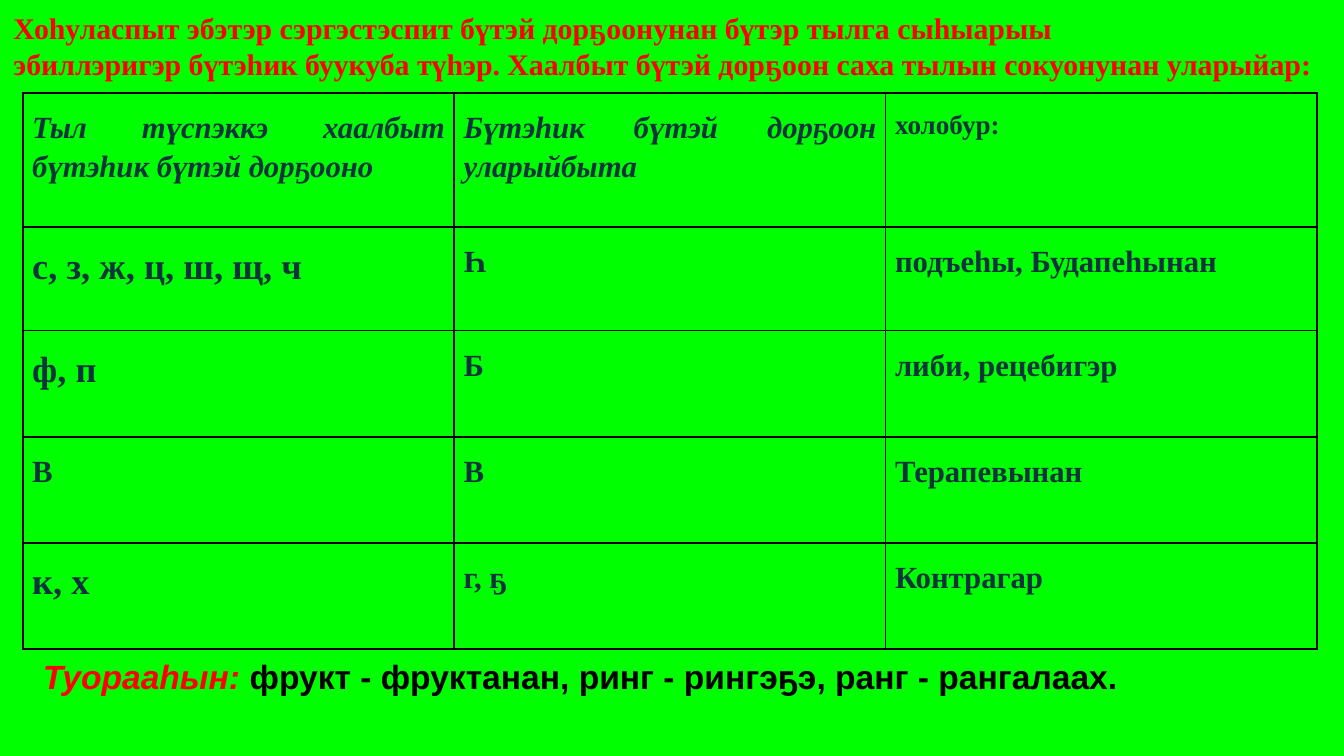
from dataclasses import dataclass

from lxml.etree import SubElement
from pptx import Presentation
from pptx.dml.color import RGBColor
from pptx.enum.text import MSO_ANCHOR, MSO_AUTO_SIZE, PP_ALIGN
from pptx.oxml.ns import qn
from pptx.util import Inches, Pt


@dataclass(frozen=True)
class Theme:
    background: str = "00FF00"
    accent: str = "FF0000"
    ink: str = "000000"
    table_ink: str = "0C343D"
    serif: str = "Times New Roman"
    sans: str = "Arial"
    title_size: float = 16
    note_size: float = 18
    cell_size: float = 16.5
    letters_size: float = 19.5
    example_size: float = 14.5
    border: float = 1


class SlideBuilder:
    def __init__(self, presentation, theme):
        self.theme = theme
        self.slide = presentation.slides.add_slide(presentation.slide_layouts[5])
        fill = self.slide.background.fill
        fill.solid()
        fill.fore_color.rgb = RGBColor.from_string(theme.background)

    def run(self, paragraph, text, font, size, color, italic=False):
        run = paragraph.add_run()
        run.text = text
        run.font.name = font
        run.font.size = Pt(size)
        run.font.bold = True
        run.font.italic = italic
        run.font.color.rgb = RGBColor.from_string(color)

    def title(self, lines, left, top, width, height):
        shape = self.slide.shapes.title
        shape.left, shape.top = Inches(left), Inches(top)
        shape.width, shape.height = Inches(width), Inches(height)
        frame = shape.text_frame
        frame.word_wrap = True
        frame.auto_size = MSO_AUTO_SIZE.NONE
        frame.vertical_anchor = MSO_ANCHOR.TOP
        frame.margin_top = Inches(0.07)
        for index, line in enumerate(lines):
            paragraph = frame.add_paragraph() if index else frame.paragraphs[0]
            paragraph.alignment = PP_ALIGN.LEFT
            self.run(paragraph, line, self.theme.serif, self.theme.title_size, self.theme.accent)

    def note(self, label, text, left, top, width, height):
        shape = self.slide.shapes.add_textbox(
            Inches(left), Inches(top), Inches(width), Inches(height))
        frame = shape.text_frame
        frame.word_wrap = True
        frame.margin_top = frame.margin_bottom = Inches(0.1)
        paragraph = frame.paragraphs[0]
        theme = self.theme
        self.run(paragraph, label, theme.sans, theme.note_size, theme.accent, italic=True)
        self.run(paragraph, text, theme.sans, theme.note_size, theme.ink)

    def borders(self, cell):
        properties = cell._tc.get_or_add_tcPr()
        for side in ("lnL", "lnR", "lnT", "lnB"):
            line = SubElement(properties, qn(f"a:{side}"), w=str(Pt(self.theme.border)))
            fill = SubElement(line, qn("a:solidFill"))
            SubElement(fill, qn("a:srgbClr"), val=self.theme.ink)

    def cell(self, cell, text, size, italic=False, alignment=PP_ALIGN.JUSTIFY, after=12):
        cell.margin_left = cell.margin_right = Inches(0.07)
        cell.margin_top = cell.margin_bottom = Inches(0.1)
        self.borders(cell)
        cell.fill.background()
        paragraph = cell.text_frame.paragraphs[0]
        paragraph.alignment = alignment
        paragraph.line_spacing = 1.15
        paragraph.space_before = Pt(12)
        paragraph.space_after = Pt(after)
        self.run(paragraph, text, self.theme.serif, size, self.theme.table_ink, italic)

    def table(self, rows, left, top, column_width, row_heights):
        columns = len(rows[0])
        table = self.slide.shapes.add_table(
            len(rows), columns, Inches(left), Inches(top),
            Inches(column_width * columns), Inches(sum(row_heights))).table
        table.first_row = table.horz_banding = False
        for column in table.columns:
            column.width = Inches(column_width)
        for row, height in zip(table.rows, row_heights):
            row.height = Inches(height)
        for row_index, row in enumerate(rows):
            for column_index, (text, style) in enumerate(row):
                self.cell(table.cell(row_index, column_index), text, **style)


def main():
    presentation = Presentation()
    presentation.slide_width = Inches(10)
    presentation.slide_height = Inches(10 * 9 / 16)
    theme = Theme()
    builder = SlideBuilder(presentation, theme)

    plain = {"size": theme.cell_size}
    heading = {"size": theme.cell_size, "italic": True}
    letters = {"size": theme.letters_size}
    example = {"size": theme.example_size, "alignment": PP_ALIGN.LEFT, "after": 6}
    sound_changes = [
        [("Тыл түспэккэ хаалбыт бүтэһик бүтэй дорҕооно", heading),
         ("Бүтэһик бүтэй дорҕоон уларыйбыта", heading),
         ("холобур:", example)],
        [("с, з, ж, ц, ш, щ, ч", letters), ("Һ", plain), ("подъеһы, Будапеһынан", plain)],
        [("ф, п", letters), ("Б", plain), ("либи, рецебигэр", plain)],
        [("В", plain), ("В", plain), ("Терапевынан", plain)],
        [("к, х", letters), ("г, ҕ", plain), ("Контрагар", plain)],
    ]
    builder.table(sound_changes, 0.17, 0.69, 3.21, [1, 0.77, 0.79, 0.79, 0.79])
    builder.note("Туорааһын: ", "фрукт - фруктанан, ринг - рингэҕэ, ранг - рангалаах.",
                 0.22, 4.78, 9.51, 0.84)
    builder.title(
        ["Хоһуласпыт эбэтэр сэргэстэспит бүтэй дорҕоонунан бүтэр тылга сыһыарыы",
         "эбиллэригэр бүтэһик буукуба түһэр. Хаалбыт бүтэй дорҕоон саха тылын сокуонунан уларыйар:"],
        0, 0, 10, 0.98)
    presentation.save("out.pptx")


if __name__ == "__main__":
    main()
